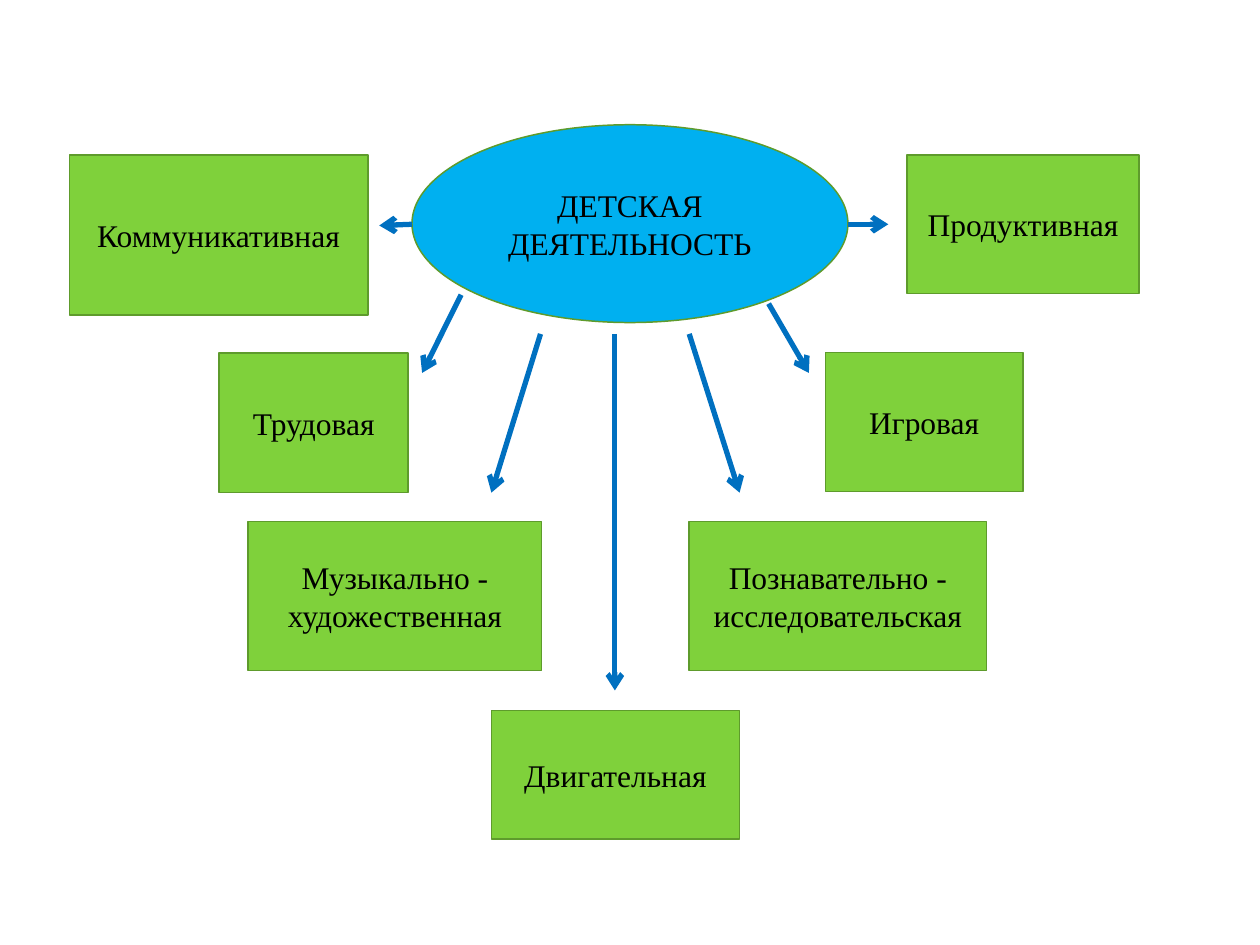
from pptx import Presentation, util as u
from pptx.dml.color import RGBColor
from pptx.enum import shapes, text
from pptx.oxml.ns import qn
from lxml import etree


def rgb(value):
    return RGBColor.from_string(value)


class Deck:
    """Holds the diagram style and draws nodes and arrows on the current slide."""

    font = {"name": "Times New Roman", "size": u.Pt(18)}
    ink, border, arrow_color = "000000", "5E9B2C", "0070C0"

    def __init__(self, prs):
        self.s = prs.slides.add_slide(prs.slide_layouts[6])

    def node(self, label, box, fill="7FD13B", kind=shapes.MSO_SHAPE.RECTANGLE):
        sp = self.s.shapes.add_shape(kind, *map(u.Inches, box))
        sp.shadow.inherit = False
        sp.fill.solid()
        sp.fill.fore_color.rgb = rgb(fill)
        sp.line.color.rgb = rgb(self.border)
        sp.line.width = u.Pt(0.85)
        tf = sp.text_frame
        tf.word_wrap = True
        tf.vertical_anchor = text.MSO_ANCHOR.MIDDLE
        p = tf.paragraphs[0]
        p.alignment = text.PP_ALIGN.CENTER
        r = p.add_run()
        r.text = label
        for key, value in self.font.items():
            setattr(r.font, key, value)
        r.font.color.rgb = rgb(self.ink)

    def arrow(self, *ends):
        c = self.s.shapes.add_connector(shapes.MSO_CONNECTOR.STRAIGHT, *map(u.Inches, ends))
        c.line.color.rgb = rgb(self.arrow_color)
        c.line.width = u.Pt(3)
        etree.SubElement(c.line._get_or_add_ln(), qn("a:tailEnd"), type="arrow")
        etree.SubElement(c._element.spPr, qn("a:effectLst"))


ACTIVITIES = [
    ("Коммуникативная", (0.55, 1.23, 2.37, 1.27), (3.27, 1.78, 3.01, 1.79)),
    ("Трудовая", (1.74, 2.8, 1.5, 1.11), (3.66, 2.34, 3.35, 2.96)),
    ("Продуктивная", (7.2, 1.23, 1.84, 1.1), (6.73, 1.78, 7.05, 1.78)),
    ("Игровая", (6.55, 2.8, 1.57, 1.1), (6.1, 2.41, 6.42, 2.96)),
    ("Познавательно - исследовательская", (5.47, 4.14, 2.36, 1.18), (5.47, 2.65, 5.87, 3.91)),
    ("Музыкально - художественная", (1.97, 4.14, 2.33, 1.18), (4.29, 2.65, 3.9, 3.91)),
    ("Двигательная", (3.9, 5.64, 1.97, 1.02), (4.88, 2.65, 4.88, 5.48)),
]


def main():
    prs = Presentation()
    prs.slide_width, prs.slide_height = u.Inches(10), u.Inches(7.5)
    deck = Deck(prs)
    deck.node("ДЕТСКАЯ ДЕЯТЕЛЬНОСТЬ", (3.27, 0.99, 3.46, 1.57), "00B0F0", shapes.MSO_SHAPE.OVAL)
    for label, box, ends in ACTIVITIES:
        deck.node(label, box)
        deck.arrow(*ends)
    prs.save("out.pptx")


if __name__ == "__main__":
    main()
